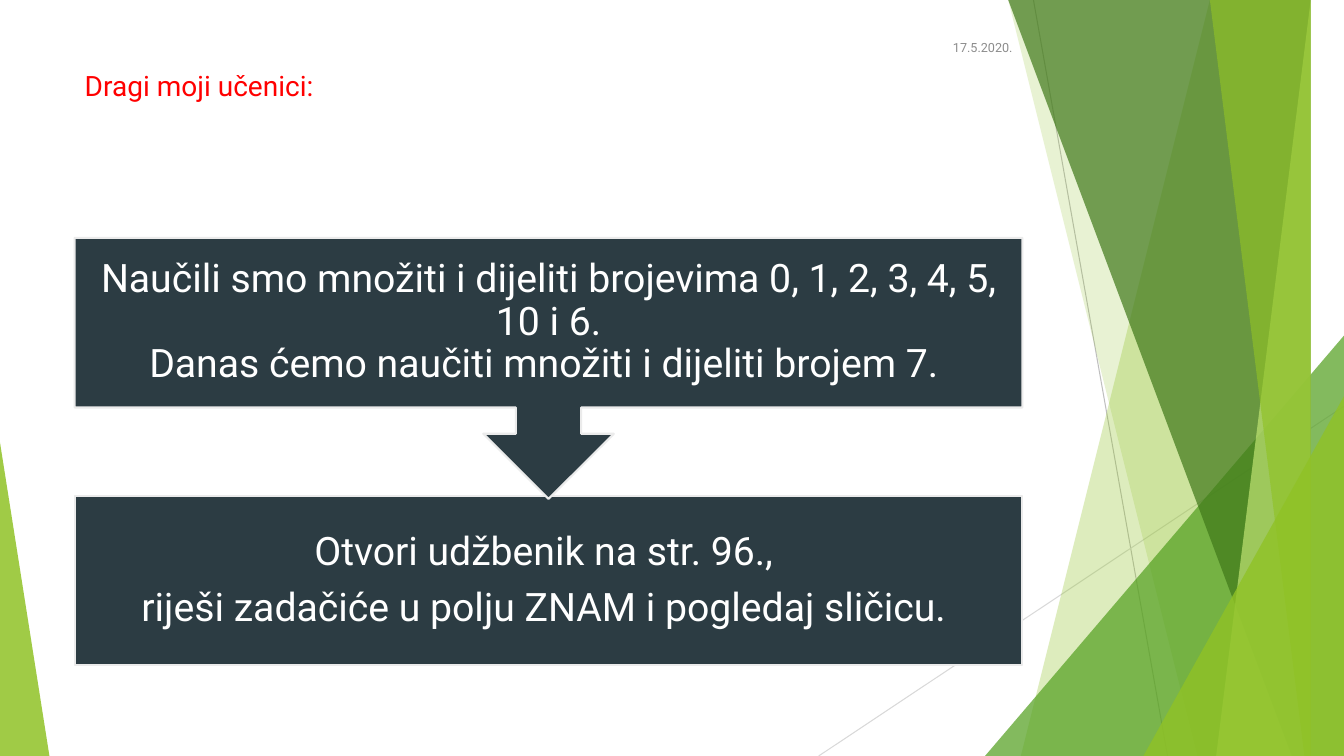
from dataclasses import dataclass

from lxml.etree import SubElement
from pptx import Presentation
from pptx.dml.color import RGBColor as Rgb
from pptx.enum.shapes import MSO_CONNECTOR as Conn, MSO_SHAPE as Kind
from pptx.enum.text import MSO_ANCHOR as Anchor, PP_ALIGN as Align
from pptx.oxml.ns import qn
from pptx.util import Inches, Pt


@dataclass(frozen=True)
class Theme:
    font: str = "Roboto"
    lime: str = "90C226"
    leaf: str = "54A021"
    moss: str = "3F7819"
    pale: str = "C0E474"
    slate: str = "2C3C43"
    edge: str = "EBEBEB"
    red: str = "FF0000"
    gray: str = "8C8C8C"
    white: str = "FFFFFF"
    head: int = 20
    body: int = 28
    small: int = 9


@dataclass(frozen=True)
class Box:
    left: float
    top: float
    width: float
    height: float

    def emu(self) -> tuple:
        return tuple(map(Inches, (self.left, self.top, self.width, self.height)))


@dataclass(frozen=True)
class Ray:
    start: tuple
    end: tuple
    color: str


@dataclass(frozen=True)
class Band:
    points: tuple
    color: str
    alpha: int


@dataclass(frozen=True)
class Wedge:
    box: Box
    peak: float
    color: str
    alpha: int


@dataclass(frozen=True)
class Step:
    frame: Box
    kind: Kind
    turn: int
    lines: tuple


THEME = Theme()
WIDE, HIGH = 13.33, 7.5
LEFT, SPAN, TALL = 0.74, 9.4, 1.68
INSET = 0.22

RAYS = (
    Ray((10.25, 0), (11.58, HIGH), "BFBFBF"),
    Ray((WIDE, 4.03), (8.12, HIGH), "D9D9D9"),
)


def band(top: float, base: float, color: str, alpha: int) -> Band:
    """Fill from a slanted left edge to the right side of the slide."""
    return Band(((top, 0), (WIDE, 0), (WIDE, HIGH), (base, HIGH)), color, alpha)


# Decoration, from back to front
DECOR = (
    band(12.28, 10.04, THEME.lime, 30),
    band(10.5, 11.83, THEME.lime, 20),
    Wedge(Box(9.77, 3.33, 3.56, 4.17), 1, THEME.leaf, 72),
    band(10.21, 12.91, THEME.moss, 70),
    band(13.03, 11.92, THEME.pale, 70),
    band(11.96, 13.18, THEME.lime, 65),
    Wedge(Box(11.34, 3.93, 1.99, 3.57), 1, THEME.lime, 80),
    Wedge(Box(0, 4.39, 0.49, 3.11), 0, THEME.lime, 85),
)

STEPS = (
    Step(Box(LEFT, 4.92, SPAN, TALL), Kind.RECTANGLE, 0,
         ("Otvori udžbenik na str. 96., ",
          "riješi zadačiće u polju ZNAM i pogledaj sličicu. ")),
    Step(Box(LEFT, 2.36, SPAN, 2.59), Kind.UP_ARROW_CALLOUT, 180,
         ("Naučili smo množiti i dijeliti brojevima 0, 1, 2, 3, 4, 5, 10 i 6.\v"
          "Danas ćemo naučiti množiti i dijeliti brojem 7. ",)),
)


def paint(shape, color: str, alpha: int = 100) -> None:
    shape.shadow.inherit = False
    shape.fill.solid()
    shape.fill.fore_color.rgb = Rgb.from_string(color)
    shape.line.fill.background()
    if alpha < 100:
        tint = shape._element.spPr.find(qn("a:solidFill"))[0]
        SubElement(tint, qn("a:alpha")).set("val", str(alpha * 1000))


def style(frame, size: int, color: str, align: Align, after: float = 0,
          pitch: float = 1) -> None:
    frame.word_wrap = True
    for para in frame.paragraphs:
        para.alignment = align
        para.line_spacing = pitch
        para.space_before = Pt(0)
        para.space_after = Pt(after)
        for run in para.runs:
            run.font.name = THEME.font
            run.font.size = Pt(size)
            run.font.color.rgb = Rgb.from_string(color)


def draw_ray(shapes, ray: Ray) -> None:
    line = shapes.add_connector(
        Conn.STRAIGHT, *map(Inches, ray.start + ray.end))
    line.line.color.rgb = Rgb.from_string(ray.color)
    line.line.width = Pt(0.75)
    SubElement(line._element.spPr, qn("a:effectLst"))


def draw_band(shapes, item: Band) -> None:
    pen = shapes.build_freeform(*item.points[0], scale=Inches(1))
    pen.add_line_segments(item.points[1:], close=True)
    paint(pen.convert_to_shape(), item.color, item.alpha)


def draw_wedge(shapes, item: Wedge) -> None:
    shape = shapes.add_shape(Kind.ISOSCELES_TRIANGLE, *item.box.emu())
    shape.adjustments[0] = item.peak
    paint(shape, item.color, item.alpha)


def draw_step(shapes, step: Step) -> None:
    shape = shapes.add_shape(step.kind, *step.frame.emu())
    shape.rotation = step.turn
    paint(shape, THEME.slate)
    shape.line.color.rgb = Rgb.from_string(THEME.edge)
    shape.line.width = Pt(1.5)

    # The label stays upright above the turned callout
    label = Box(LEFT, step.frame.top, SPAN, TALL)
    frame = shapes.add_textbox(*label.emu()).text_frame
    frame.text = "\n".join(step.lines)
    frame.vertical_anchor = Anchor.MIDDLE
    frame.margin_left = frame.margin_right = Inches(INSET)
    frame.margin_top = frame.margin_bottom = Inches(INSET)
    style(frame, THEME.body, THEME.white, Align.CENTER, after=10, pitch=0.9)


def main() -> None:
    deck = Presentation()
    deck.slide_width, deck.slide_height = Inches(WIDE), Inches(HIGH)
    slide = deck.slides.add_slide(deck.slide_layouts[5])
    shapes = slide.shapes

    # Background
    for ray in RAYS:
        draw_ray(shapes, ray)
    for item in DECOR:
        if isinstance(item, Band):
            draw_band(shapes, item)
        else:
            draw_wedge(shapes, item)

    # Title
    title = shapes.title
    title.left, title.top, title.width, title.height = Box(
        LEFT, 0.67, SPAN, 1.44).emu()
    title.text_frame.text = "Dragi moji učenici:"
    title.text_frame.vertical_anchor = Anchor.TOP
    style(title.text_frame, THEME.head, THEME.red, Align.LEFT, pitch=0.9)

    # Date
    date = shapes.add_textbox(*Box(9.14, 0.27, 1, 0.4).emu()).text_frame
    date.text = "17.5.2020."
    date.vertical_anchor = Anchor.MIDDLE
    style(date, THEME.small, THEME.gray, Align.RIGHT, after=6)

    # Steps
    for step in STEPS:
        draw_step(shapes, step)

    deck.save("out.pptx")


if __name__ == "__main__":
    main()
